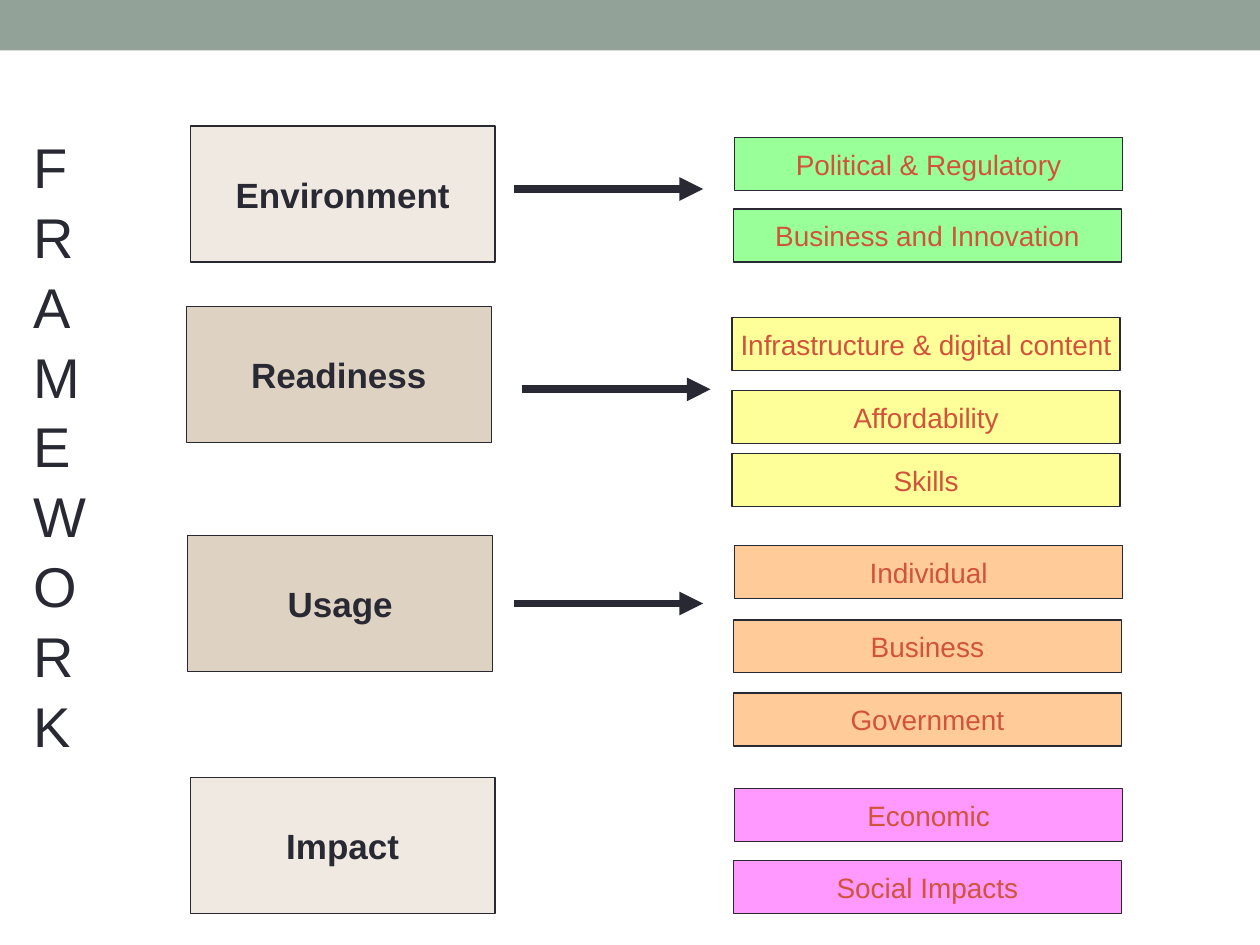
"""Build the framework slide: four categories with their pillars."""
from lxml import etree
from pptx import Presentation
from pptx.dml.color import RGBColor
from pptx.enum.shapes import MSO_CONNECTOR, MSO_SHAPE
from pptx.enum.text import MSO_ANCHOR, MSO_AUTO_SIZE, PP_ALIGN
from pptx.oxml.ns import qn
from pptx.util import Inches, Pt

INK, ACCENT, BAND = "292934", "D2533C", "93A299"
LIGHT, SAND = "EFE9E1", "DED2C2"

GROUPS = [
    ("Environment", LIGHT, 1.51, 1.0, "99FF99", (4.08, 1.5),
     [("Political & Regulatory", 5.83, 1.09), ("Business and Innovation", 5.82, 1.66)]),
    ("Readiness", SAND, 1.48, 2.43, "FFFF99", (4.14, 3.09),
     [("Infrastructure & digital content", 5.81, 2.52), ("Affordability", 5.81, 3.1),
      ("Skills", 5.81, 3.6)]),
    ("Usage", SAND, 1.49, 4.25, "FFCC99", (4.08, 4.79),
     [("Individual", 5.83, 4.33), ("Business", 5.82, 4.92), ("Government", 5.82, 5.5)]),
    ("Impact", LIGHT, 1.51, 6.17, "FF99FF", None,
     [("Economic", 5.83, 6.26), ("Social Impacts", 5.82, 6.83)]),
]


def rgb(value):
    return RGBColor.from_string(value)


class Deck:
    def __init__(self, slide, font="Arial"):
        self.slide = slide
        self.font = font

    def style(self, p, size, color, bold=False):
        p.font.name = self.font
        p.font.size = Pt(size)
        p.font.bold = bold
        p.font.color.rgb = rgb(color)

    def rect(self, x, y, w, h, fill, line=None):
        s = self.slide.shapes.add_shape(
            MSO_SHAPE.RECTANGLE, Inches(x), Inches(y), Inches(w), Inches(h))
        s.shadow.inherit = False
        s.fill.solid()
        s.fill.fore_color.rgb = rgb(fill)
        if line:
            s.line.color.rgb = rgb(line)
            s.line.width = Pt(0.75)
        else:
            s.line.fill.background()
        return s

    def box(self, text, x, y, w, h, fill, size, color, bold=False):
        tf = self.rect(x, y, w, h, fill, INK).text_frame
        tf.word_wrap = False
        tf.vertical_anchor = MSO_ANCHOR.MIDDLE
        p = tf.paragraphs[0]
        p.text = text
        p.alignment = PP_ALIGN.CENTER
        self.style(p, size, color, bold)

    def arrow(self, x, y, length):
        s = self.slide.shapes.add_connector(
            MSO_CONNECTOR.STRAIGHT, Inches(x), Inches(y), Inches(x + length), Inches(y))
        s.line.color.rgb = rgb(INK)
        s.line.width = Pt(4.5)
        etree.SubElement(s.line._get_or_add_ln(), qn("a:tailEnd"), type="triangle")
        etree.SubElement(s._element.spPr, qn("a:effectLst"))

    def vertical_word(self, word, x, y, w, h):
        s = self.slide.shapes.add_textbox(Inches(x), Inches(y), Inches(w), Inches(h))
        tf = s.text_frame
        tf.word_wrap = True
        tf.auto_size = MSO_AUTO_SIZE.SHAPE_TO_FIT_TEXT
        for i, letter in enumerate(word):
            p = tf.add_paragraph() if i else tf.paragraphs[0]
            p.text = letter
            p.line_spacing = 1.04
            self.style(p, 32, INK)


def main():
    prs = Presentation()
    prs.slide_width, prs.slide_height = Inches(10), Inches(7.5)
    deck = Deck(prs.slides.add_slide(prs.slide_layouts[6]))
    deck.rect(0, 0, 10, 0.4, BAND)
    for name, fill, x, y, pillar_fill, arrow, pillars in GROUPS:
        if arrow:
            deck.arrow(*arrow, 1.5)
        deck.box(name, x, y, 2.42, 1.08, fill, 20, INK, bold=True)
        for text, left, top in pillars:
            deck.box(text, left, top, 3.08, 0.42, pillar_fill, 16, ACCENT)
    deck.vertical_word("FRAMEWORK", 0.17, 0.98, 1, 5.25)
    prs.save("out.pptx")


if __name__ == "__main__":
    main()
